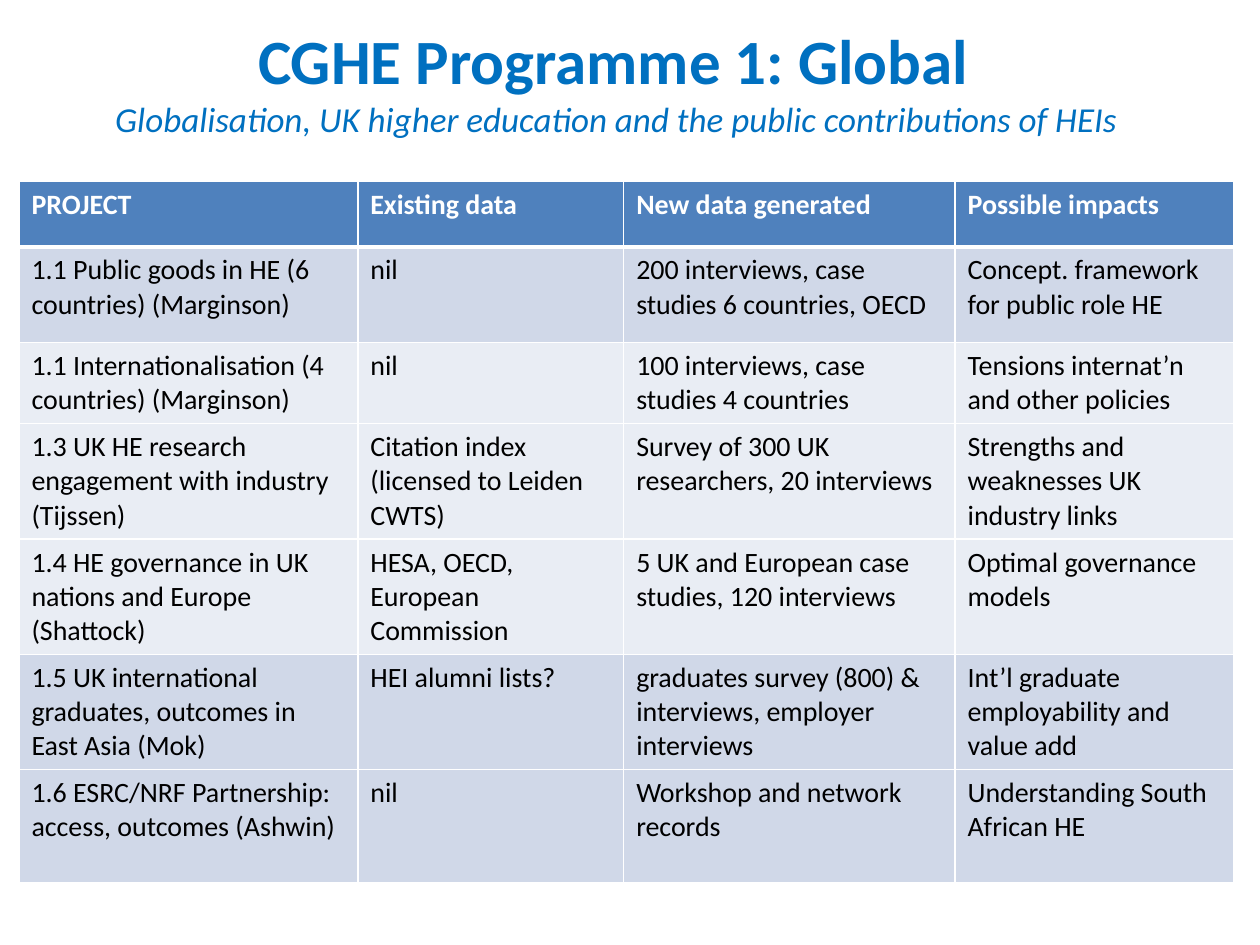
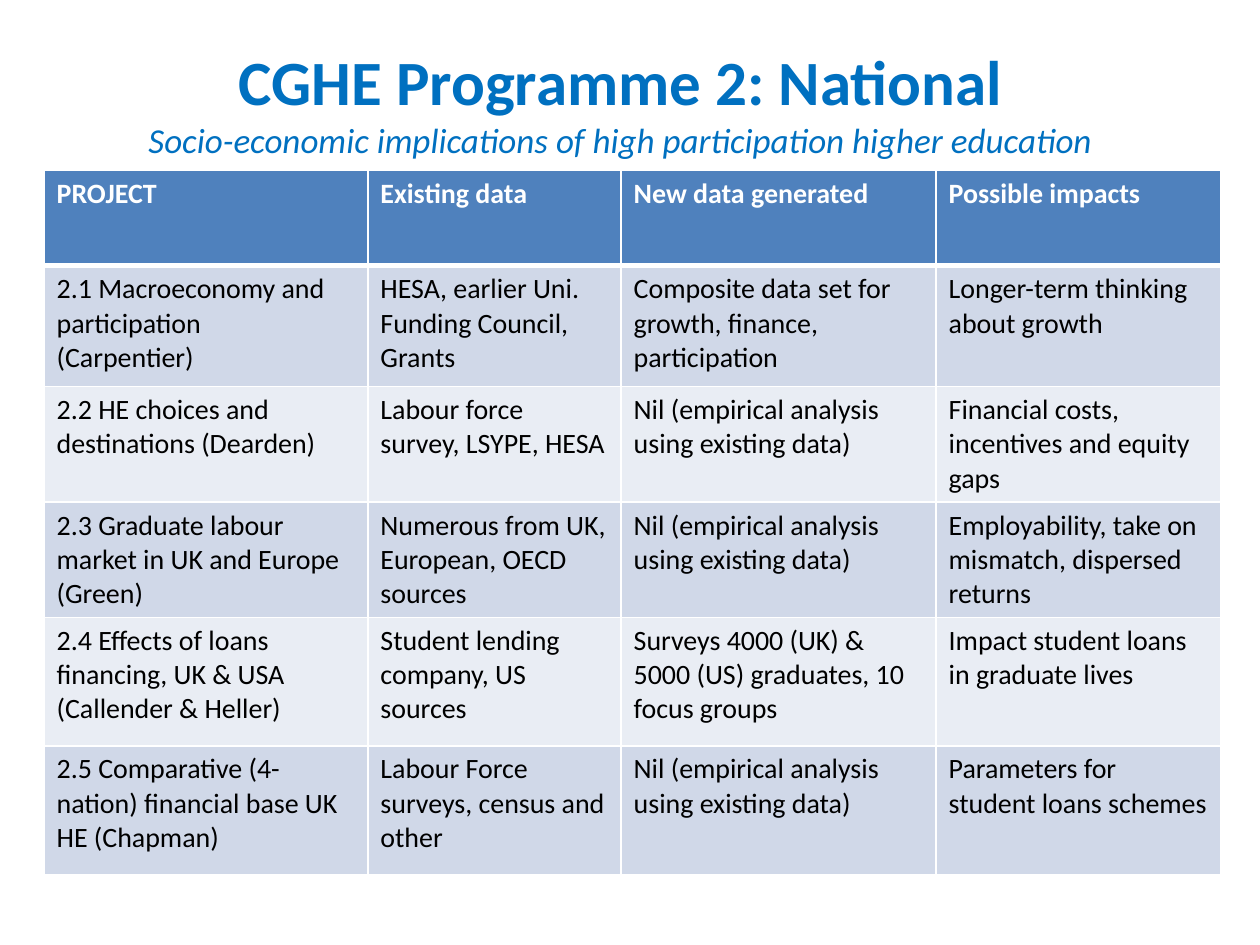
from dataclasses import dataclass

from lxml import etree
from pptx import Presentation
from pptx.dml.color import RGBColor
from pptx.enum.text import MSO_ANCHOR, PP_ALIGN
from pptx.oxml.ns import qn
from pptx.util import Inches, Pt

MIDDLE = MSO_ANCHOR.MIDDLE
CENTER = PP_ALIGN.CENTER
WIDE, HIGH = Inches(10), Inches(7.5)
TITLE_ONLY = 5


@dataclass(frozen=True)
class Theme:
    face: str = "Calibri"
    title: str = "0070C0"
    head: str = "4F81BD"
    dark: str = "D0D8E8"
    light: str = "E9EDF4"
    white: str = "FFFFFF"
    ink: str = "000000"
    big: int = 36
    sub: int = 20
    body: int = 16
    thin: int = 1
    thick: int = 3


THEME = Theme()
HEADS = ("PROJECT", "Existing data", "New data generated", "Possible impacts")
UNUSED = "Nil (empirical analysis using existing data)"

GLOBAL = (
    ("1.1 Public goods in HE (6 countries) (Marginson)", "nil",
     "200 interviews, case studies 6 countries, OECD",
     "Concept. framework for public role HE"),
    ("1.1 Internationalisation (4 countries) (Marginson)", "nil",
     "100 interviews, case studies 4 countries",
     "Tensions internat’n and other policies"),
    ("1.3 UK HE research engagement with industry (Tijssen)",
     "Citation index (licensed to Leiden CWTS)",
     "Survey of 300 UK researchers, 20 interviews",
     "Strengths and weaknesses UK industry links"),
    ("1.4 HE governance in UK nations and Europe (Shattock)",
     "HESA, OECD, European Commission",
     "5 UK and European case studies, 120 interviews",
     "Optimal governance models"),
    ("1.5 UK international graduates, outcomes in East Asia (Mok)",
     "HEI alumni lists?",
     "graduates survey (800) & interviews, employer interviews",
     "Int’l graduate employability and value add"),
    ("1.6 ESRC/NRF Partnership: access, outcomes (Ashwin)", "nil",
     "Workshop and network records",
     "Understanding South African HE"),
)

NATION = (
    ("2.1 Macroeconomy and participation\n(Carpentier)",
     "HESA, earlier Uni. Funding Council, Grants",
     "Composite data set for growth, finance, participation",
     "Longer-term thinking about growth"),
    ("2.2 HE choices and destinations (Dearden)",
     "Labour force survey, LSYPE, HESA", UNUSED,
     "Financial costs, incentives and equity gaps"),
    ("2.3 Graduate labour market in UK and Europe (Green)",
     "Numerous from UK, European, OECD sources", UNUSED,
     "Employability, take on mismatch, dispersed returns"),
    ("2.4 Effects of loans financing, UK & USA (Callender & Heller)",
     "Student lending company, US sources",
     "Surveys 4000 (UK) & 5000 (US) graduates, 10 focus groups",
     "Impact student loans in graduate lives"),
    ("2.5 Comparative (4-nation) financial base UK HE (Chapman)",
     "Labour Force surveys, census and other", UNUSED,
     "Parameters for student loans schemes"),
)


def across(share):
    return int(WIDE * share / 100)


def down(share):
    return int(HIGH * share / 100)


def style(run, size, color, bold=False, slant=False):
    font = run.font
    font.name, font.size = THEME.face, Pt(size)
    font.bold, font.italic = bold, slant
    font.color.rgb = RGBColor.from_string(color)


def add_title(slide, top, main_line, sub_line):
    title = slide.shapes.title
    title.left, title.top = across(5), down(top)
    title.width, title.height = across(88.5), down(17)
    frame = title.text_frame
    frame.vertical_anchor = MIDDLE
    para = frame.paragraphs[0]
    para.text = f"{main_line}\v{sub_line}"
    para.alignment = CENTER
    style(para.runs[0], THEME.big, THEME.title, bold=True)
    style(para.runs[1], THEME.sub, THEME.title, slant=True)
    for gap in title.element.iter(qn("a:br")):
        etree.SubElement(gap, qn("a:rPr"), sz=str(THEME.big * 100))


def add_edges(cell, top, bottom):
    props = cell._tc.get_or_add_tcPr()
    for side, width in zip("LRTB", (THEME.thin, THEME.thin, top, bottom)):
        line = etree.SubElement(props, qn(f"a:ln{side}"), w=str(Pt(width)))
        fill = etree.SubElement(line, qn("a:solidFill"))
        etree.SubElement(fill, qn("a:srgbClr"), val=THEME.white)


def fill_cell(cell, text, row, shade):
    head = row == 0
    add_edges(cell, THEME.thick if row == 1 else THEME.thin,
              THEME.thick if head else THEME.thin)
    cell.fill.solid()
    cell.fill.fore_color.rgb = RGBColor.from_string(shade)
    cell.text_frame.text = text
    for para in cell.text_frame.paragraphs:
        for run in para.runs:
            style(run, THEME.body, THEME.white if head else THEME.ink, head)


def add_grid(slide, left, top, cols, rows, shades, data):
    frame = slide.shapes.add_table(
        len(rows), len(cols), across(left), down(top),
        across(sum(cols)), down(sum(rows)))
    table = frame.table
    for col, share in zip(table.columns, cols):
        col.width = across(share)
    for row, share in zip(table.rows, rows):
        row.height = down(share)
    for r, (line, shade) in enumerate(zip((HEADS, *data), shades)):
        for c, text in enumerate(line):
            fill_cell(table.cell(r, c), text, r, shade)


def main():
    deck = Presentation()
    deck.slide_width, deck.slide_height = WIDE, HIGH
    layout = deck.slide_layouts[TITLE_ONLY]
    head, dark, light = THEME.head, THEME.dark, THEME.light

    slide = deck.slides.add_slide(layout)
    add_title(slide, 0, "CGHE Programme 1: Global ",
              "Globalisation, UK higher education and the public "
              "contributions of HEIs ")
    add_grid(slide, 1.5, 19.2, (26.9, 21.1, 26.3, 22.1),
             (6.93, 10.13, 8.4, 12, 12, 12, 12),
             (head, dark, light, light, light, dark, dark), GLOBAL)

    slide = deck.slides.add_slide(layout)
    add_title(slide, 2.27, "CGHE Programme 2: National",
              "Socio-economic implications of high participation "
              "higher education")
    add_grid(slide, 3.5, 18, (25.7, 20.1, 25, 22.6),
             (10.13, 12.8, 12, 12.13, 13.6, 13.6),
             (head, dark, light, dark, light, dark), NATION)

    deck.save("out.pptx")


if __name__ == "__main__":
    main()
